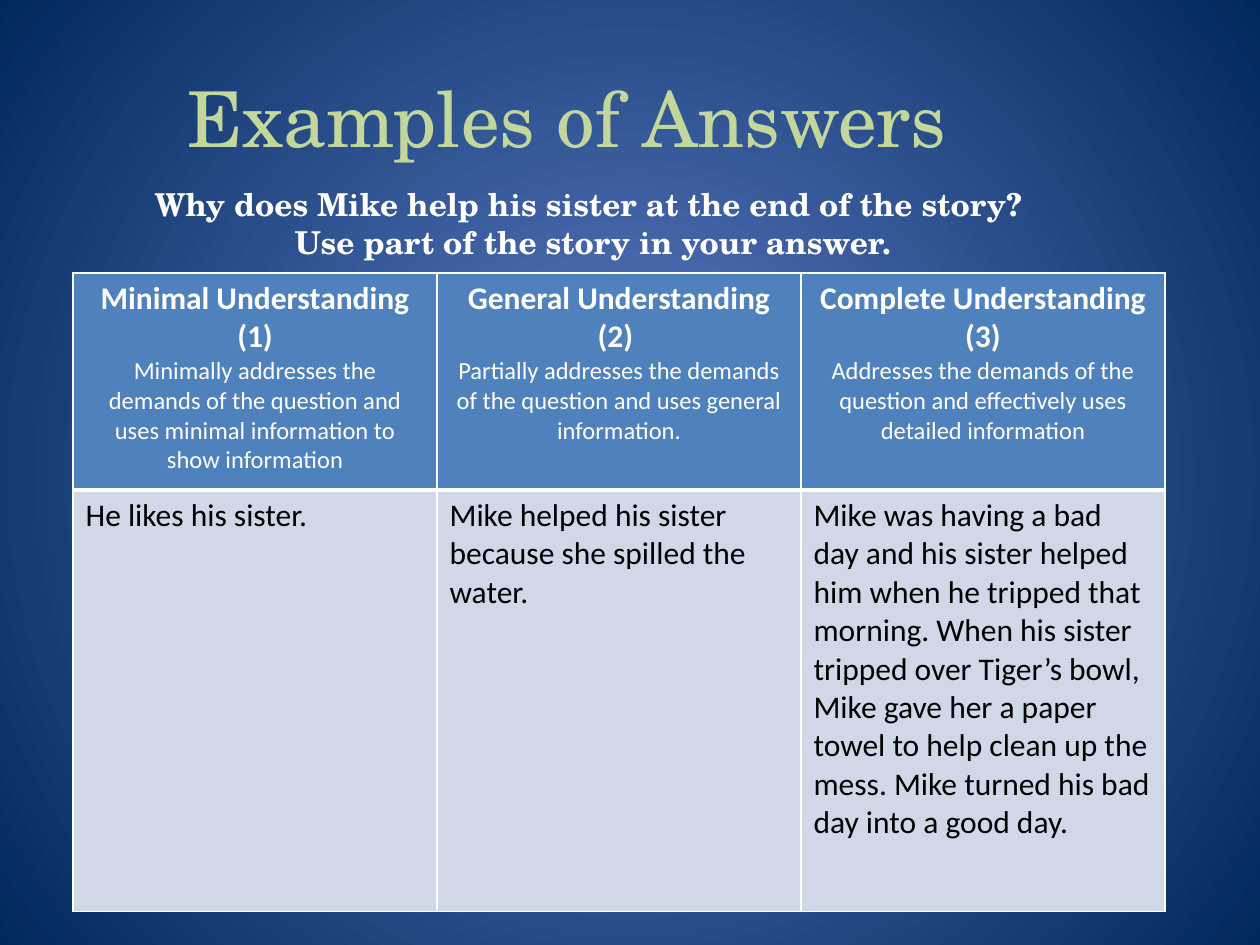
import pptx
import pptx.dml.color
import pptx.enum.text
import pptx.oxml
import pptx.oxml.ns
import pptx.util

Pt = pptx.util.Pt
CENTER = pptx.enum.text.PP_ALIGN.CENTER
LEFT = pptx.enum.text.PP_ALIGN.LEFT
SERIF, SANS = "TeX Gyre Schola", "Calibri"


def colour(value):
    return pptx.dml.color.RGBColor.from_string(value)


def write_paragraphs(text_frame, lines, alignment, hex_colour):
    """Write (text, font format) pairs, one paragraph each."""
    for index, (text, font_format) in enumerate(lines):
        paragraph = text_frame.add_paragraph() if index else text_frame.paragraphs[0]
        paragraph.alignment = alignment
        run = paragraph.add_run()
        run.text = text
        run.font.color.rgb = colour(hex_colour)
        for name, value in font_format.items():
            setattr(run.font, name, value)


presentation = pptx.Presentation()
presentation.slide_width, presentation.slide_height = Pt(720), Pt(540)
slide = presentation.slides.add_slide(presentation.slide_layouts[5])

# Background: radial gradient from the centre
background_fill = slide.background.fill
background_fill.gradient()
for stop, value in zip(background_fill.gradient_stops, ("5E7CC5", "00295C")):
    stop.color.rgb = colour(value)
gradient = slide._element.find(".//" + pptx.oxml.ns.qn("a:gradFill"))
gradient.remove(gradient.find(pptx.oxml.ns.qn("a:lin")))
gradient.append(pptx.oxml.parse_xml(
    f'<a:path {pptx.oxml.ns.nsdecls("a")} path="circle">'
    '<a:fillToRect l="50000" t="50000" r="50000" b="50000"/></a:path>'))

# Title
title = slide.shapes.title
title.left, title.top, title.width, title.height = Pt(0), Pt(21.6), Pt(648), Pt(90)
title.text_frame.vertical_anchor = pptx.enum.text.MSO_ANCHOR.MIDDLE
write_paragraphs(title.text_frame,
                 [("Examples of Answers", {"name": SERIF, "size": Pt(44)})],
                 CENTER, "C3D69B")

# Table of answers
header_format = {"name": SANS, "size": Pt(18), "bold": True}
detail_format = {"name": SANS, "size": Pt(14), "bold": False}
answer_format = {"name": SANS, "size": Pt(18), "bold": False}
columns = [
    (["Minimal Understanding", "(1)"],
     "Minimally addresses the demands of the question and uses minimal "
     "information to show information",
     "He likes his sister."),
    (["General Understanding (2) "],
     "Partially addresses the demands of the question and uses general information.",
     "Mike helped his sister because she spilled the water."),
    (["Complete Understanding", "(3)"],
     "Addresses the demands of the question and effectively uses detailed information",
     "Mike was having a bad day and his sister helped him when he tripped that "
     "morning. When his sister tripped over Tiger’s bowl, Mike gave her a paper "
     "towel to help clean up the mess. Mike turned his bad day into a good day."),
]
table = slide.shapes.add_table(2, 3, Pt(41.76), Pt(156), Pt(624), Pt(365)).table
table.rows[0].height, table.rows[1].height = Pt(124), Pt(241)

for column_index, (headings, detail, answer) in enumerate(columns):
    table.columns[column_index].width = Pt(208)
    header_lines = [(heading, header_format) for heading in headings]
    header_lines.append((detail, detail_format))
    cell_styles = [
        (header_lines, CENTER, "FFFFFF", "4F81BD", 3),
        ([(answer, answer_format)], LEFT, "000000", "D0D8E8", 1),
    ]
    for row_index, (lines, alignment, text_colour, fill, bottom) in enumerate(cell_styles):
        cell = table.cell(row_index, column_index)
        write_paragraphs(cell.text_frame, lines, alignment, text_colour)
        # The line between header and answers is thicker
        widths = {"lnL": 1, "lnR": 1, "lnT": 3 if row_index else 1, "lnB": bottom}
        for side, width in widths.items():
            cell._tc.get_or_add_tcPr().append(pptx.oxml.parse_xml(
                f'<a:{side} {pptx.oxml.ns.nsdecls("a")} w="{Pt(width)}">'
                f'<a:solidFill><a:srgbClr val="FFFFFF"/></a:solidFill></a:{side}>'))
        cell.fill.solid()
        cell.fill.fore_color.rgb = colour(fill)

# Question above the table
question = slide.shapes.add_textbox(Pt(41.76), Pt(102.24), Pt(594), Pt(51))
question.text_frame.word_wrap = True
question.text_frame.auto_size = pptx.enum.text.MSO_AUTO_SIZE.SHAPE_TO_FIT_TEXT
question_format = {"name": SERIF, "size": Pt(18), "bold": True}
write_paragraphs(question.text_frame, [
    ("Why does Mike help his sister at the end of the story? ", question_format),
    ("Use part of the story in your answer.", question_format),
], CENTER, "FFFFFF")

presentation.save("out.pptx")
